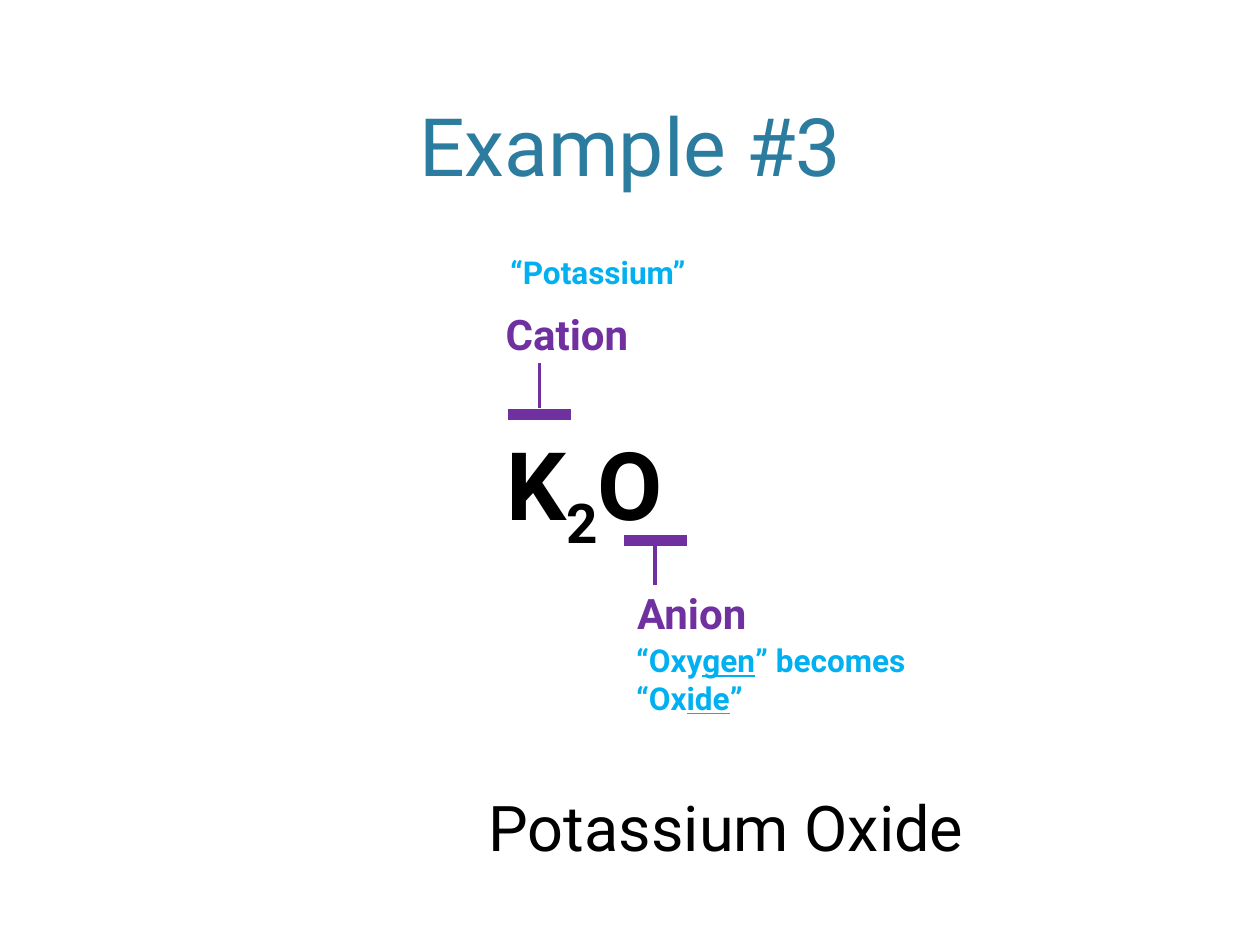
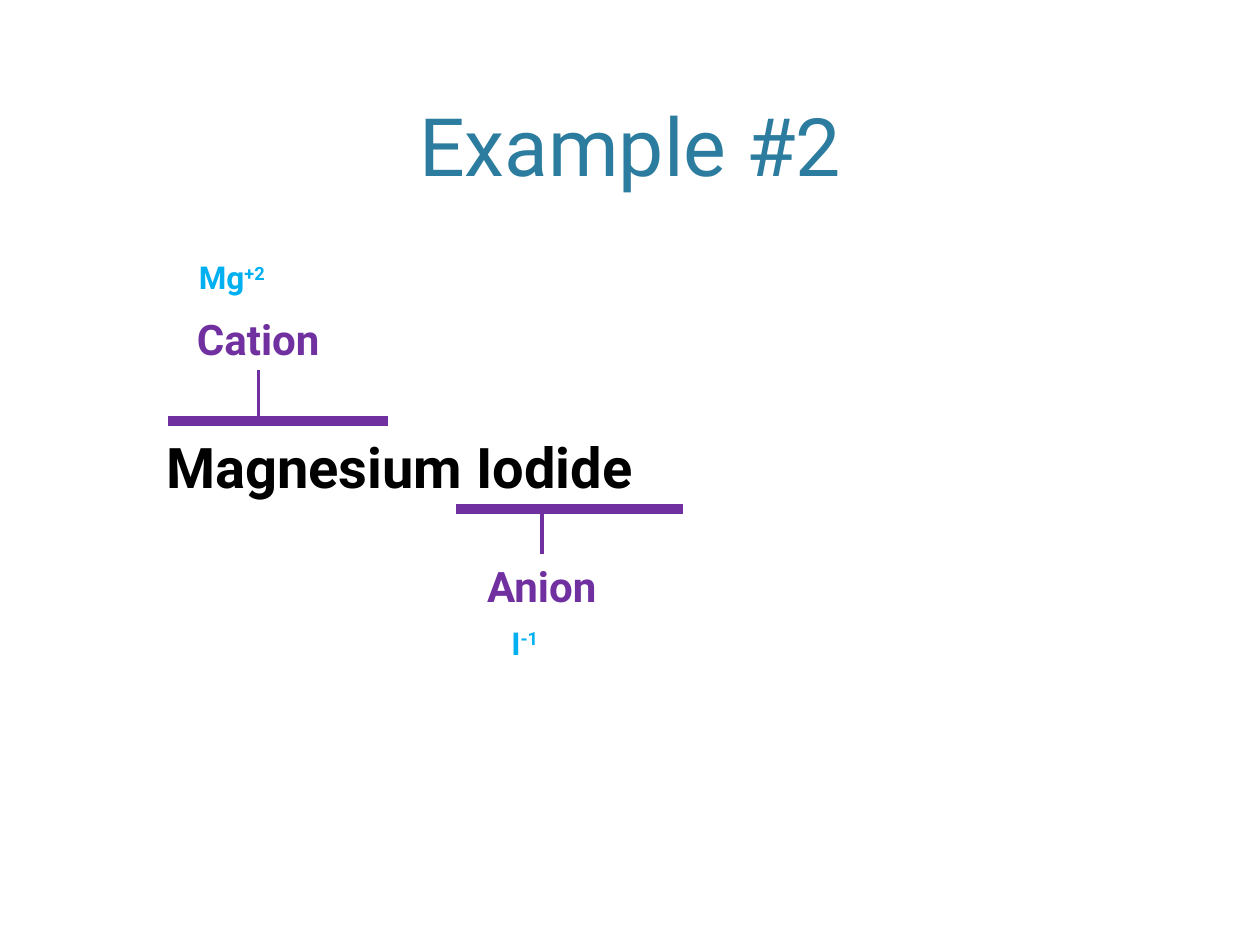
from dataclasses import dataclass

from lxml import etree
from pptx import Presentation
from pptx import util as u
from pptx.dml.color import RGBColor
from pptx.enum import shapes, text
from pptx.oxml.ns import qn

PX = 9144


@dataclass(frozen=True)
class Theme:
    """Colours, font, type sizes and line widths of the lesson."""

    font: str = "Roboto"
    title: str = "2C7C9F"
    formula: str = "000000"
    ion: str = "7030A0"
    hint: str = "00B0F0"
    title_size: int = 46
    formula_size: int = 54
    name_size: int = 32
    answer_size: int = 36
    ion_size: int = 24
    hint_size: int = 18
    bar_width: int = 6
    stem_width: int = 2


THEME = Theme()


def px(length):
    """Turn px into EMU."""
    return u.Emu(length * PX)


def style_run(run, size, color, bold):
    """Give a run its font, size, colour and weight."""
    run.font.name = THEME.font
    run.font.size = u.Pt(size)
    run.font.bold = bold
    run.font.color.rgb = RGBColor.from_string(color)


def add_title(slide, words):
    """Place and format the slide title."""
    title = slide.shapes.title
    title.left, title.top, title.width, title.height = map(px, (60, 12, 880, 146))
    frame = title.text_frame
    frame.text = words
    frame.auto_size = text.MSO_AUTO_SIZE.NONE
    frame.vertical_anchor = text.MSO_ANCHOR.BOTTOM
    heading = frame.paragraphs[0]
    heading.alignment = text.PP_ALIGN.CENTER
    style_run(heading.runs[0], THEME.title_size, THEME.title, False)


def add_words(slide, box, words, size, color, bold=True, wrap=False, centred=False):
    """Add a text box with one line of words."""
    label = slide.shapes.add_textbox(*map(px, box))
    frame = label.text_frame
    frame.word_wrap = wrap
    frame.auto_size = text.MSO_AUTO_SIZE.SHAPE_TO_FIT_TEXT
    frame.text = words
    if centred:
        frame.paragraphs[0].alignment = text.PP_ALIGN.CENTER
    style_run(frame.paragraphs[0].runs[0], size, color, bold)
    return label


def add_pieces(slide, box, pieces, size, color, wrap=True):
    """Add a text box of (words, baseline percent, underlined) pieces."""
    first, *rest = pieces
    label = add_words(slide, box, first[0], size, color, wrap=wrap)
    line = label.text_frame.paragraphs[0]
    for words, baseline, underlined in rest:
        run = line.add_run()
        run.text = words
        style_run(run, size, color, True)
        if underlined:
            run.font.underline = True
        if baseline:
            run.font._element.set("baseline", str(baseline * 1000))


def add_line(slide, start, end, width):
    """Draw a straight ion-coloured line without a shadow."""
    line = slide.shapes.add_connector(
        shapes.MSO_CONNECTOR.STRAIGHT, *map(px, (*start, *end)))
    line.line.color.rgb = RGBColor.from_string(THEME.ion)
    line.line.width = u.Pt(width)
    etree.SubElement(line._element.spPr, qn("a:effectLst"))
    return line


def add_ion(slide, name, box, bar, stem, join_side=None):
    """Mark an ion with a (left, right, y) bar, an (x, label y, bar y) stem and a label."""
    left, right, bar_y = bar
    x, label_y, stem_y = stem
    add_line(slide, (left, bar_y), (right, bar_y), THEME.bar_width)
    stem_line = add_line(slide, (x, label_y), (x, stem_y), THEME.stem_width)
    label = add_words(slide, box, name, THEME.ion_size, THEME.ion, centred=True)
    if join_side is not None:
        stem_line.begin_connect(label, join_side)


def build_potassium_oxide(slide):
    """Name the compound from its formula."""
    add_title(slide, "Example #3")
    add_pieces(slide, (392, 333, 160, 100),
               [("K", 0, False), ("2", -25, False), ("O", 0, False)],
               THEME.formula_size, THEME.formula, wrap=False)
    add_ion(slide, "Cation", (388, 240, 124, 50), (403, 453, 329), (428, 288, 324))
    add_ion(slide, "Anion", (492, 461, 114, 50), (495, 545, 429), (520, 464, 429))
    add_words(slide, (395, 196, 205, 40), "“Potassium”",
              THEME.hint_size, THEME.hint, wrap=True)
    add_pieces(slide, (495, 504, 297, 70),
               [("“Oxy", 0, False), ("gen", 0, True), ("” becomes “Ox", 0, False),
                ("ide", 0, True), ("”", 0, False)],
               THEME.hint_size, THEME.hint)
    add_words(slide, (378, 621, 398, 70), "Potassium Oxide",
              THEME.answer_size, THEME.formula, bold=False)


def build_magnesium_iodide(slide):
    """Find the ions from the compound name."""
    add_title(slide, "Example #2")
    add_words(slide, (122, 338, 420, 64), "Magnesium Iodide",
              THEME.name_size, THEME.formula)
    add_ion(slide, "Cation", (143, 244, 124, 50), (133, 308, 334), (205, 294, 330),
            join_side=2)
    add_ion(slide, "Anion", (373, 440, 114, 50), (362, 542, 404), (430, 440, 405),
            join_side=0)
    add_pieces(slide, (148, 200, 205, 40), [("Mg", 0, False), ("+2", 30, False)],
               THEME.hint_size, THEME.hint)
    add_pieces(slide, (396, 490, 68, 40), [("I", 0, False), ("-1", 30, False)],
               THEME.hint_size, THEME.hint)


def main():
    """Build both naming examples and save them."""
    deck = Presentation()
    deck.slide_width, deck.slide_height = px(1000), px(750)
    title_only = deck.slide_layouts[5]
    for build in (build_potassium_oxide, build_magnesium_iodide):
        build(deck.slides.add_slide(title_only))
    deck.save("out.pptx")


if __name__ == "__main__":
    main()
